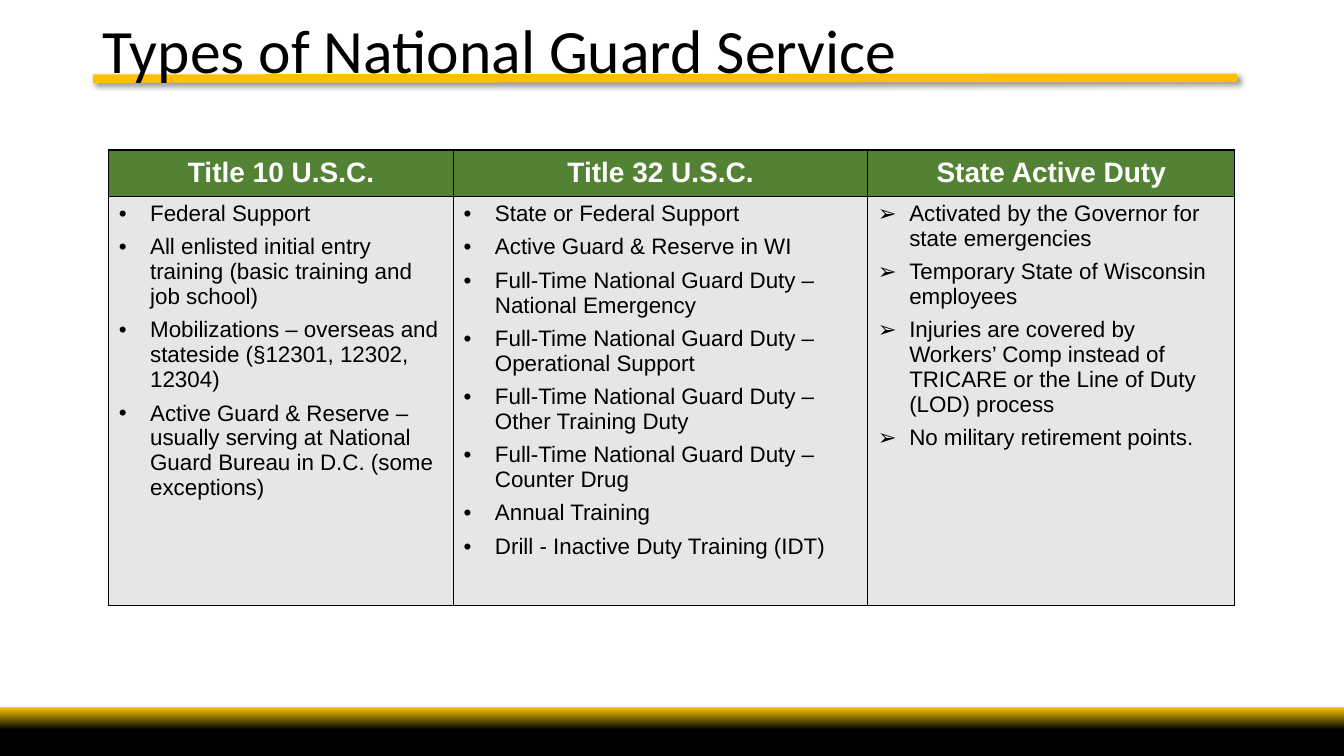
from lxml.etree import SubElement
from pptx import Presentation
from pptx.dml.color import RGBColor
from pptx.enum.shapes import MSO_CONNECTOR as Connector, MSO_SHAPE as Shape
from pptx.enum.text import MSO_ANCHOR as Anchor, PP_ALIGN as Align
from pptx.oxml.ns import qn
from pptx.util import Cm, Pt

HEADING = "Types of National Guard Service"
SERVICES = [
    ("Title 10 U.S.C.", 8.69, "•", [
        "Federal Support",
        "All enlisted initial entry training (basic training and job school)",
        "Mobilizations – overseas and stateside (§12301, 12302, 12304)",
        "Active Guard & Reserve – usually serving at National Guard Bureau in D.C. (some exceptions)",
    ]),
    ("Title 32 U.S.C.", 10.44, "•", [
        "State or Federal Support",
        "Active Guard & Reserve in WI",
        "Full-Time National Guard Duty – National Emergency",
        "Full-Time National Guard Duty – Operational Support",
        "Full-Time National Guard Duty – Other Training Duty",
        "Full-Time National Guard Duty – Counter Drug",
        "Annual Training",
        "Drill - Inactive Duty Training (IDT)",
    ]),
    ("State Active Duty", 9.25, "➢", [
        "Activated by the Governor for state emergencies",
        "Temporary State of Wisconsin employees",
        "Injuries are covered by Workers’ Comp instead of TRICARE or the Line of Duty (LOD) process",
        "No military retirement points.",
    ]),
]
COLORS = {
    "black": "000000", "white": "FFFFFF", "gold": "FFC000",
    "yellow": "FFCC00", "green": "548235", "gray": "E7E6E6",
}
SLIDE_WIDTH, SLIDE_HEIGHT = 33.87, 19.05
ROW_HEIGHTS = (1.17, 10.31)
INDENT = Cm(0.79)


def rgb(name):
    return RGBColor.from_string(COLORS[name])


def write(frame, lines, size, color="black", font="Arial", bold=False,
          align=Align.LEFT, bullet=None, after=0, spacing=None):
    frame.word_wrap = True
    for index, line in enumerate(lines):
        paragraph = frame.paragraphs[0] if index == 0 else frame.add_paragraph()
        if bullet:
            props = paragraph._p.get_or_add_pPr()
            props.set("marL", str(INDENT))
            props.set("indent", str(-INDENT))
            SubElement(props, qn("a:buFont"), typeface="Arial")
            SubElement(props, qn("a:buChar"), char=bullet)
        paragraph.alignment = align
        paragraph.space_after = Pt(after)
        if spacing:
            paragraph.line_spacing = spacing
        run = paragraph.add_run()
        run.text = line
        run.font.name, run.font.size, run.font.bold = font, Pt(size), bold
        run.font.color.rgb = rgb(color)


def style_cell(cell, color):
    props = cell._tc.get_or_add_tcPr()
    for side in ("lnL", "lnR", "lnT", "lnB"):
        border = SubElement(props, qn(f"a:{side}"), w=str(Pt(1)))
        paint = SubElement(border, qn("a:solidFill"))
        SubElement(paint, qn("a:srgbClr"), val=COLORS["black"])
    cell.fill.solid()
    cell.fill.fore_color.rgb = rgb(color)


def add_bar(slide, top, height):
    bar = slide.shapes.add_shape(Shape.RECTANGLE, 0, Cm(top), Cm(SLIDE_WIDTH), Cm(height))
    bar.shadow.inherit = False
    bar.line.fill.background()
    return bar


def add_rule(slide):
    rule = slide.shapes.add_connector(
        Connector.STRAIGHT, Cm(2.34), Cm(1.98), Cm(31.17), Cm(1.96))
    rule.line.color.rgb = rgb("gold")
    rule.line.width = Pt(6)
    effects = SubElement(rule._element.spPr, qn("a:effectLst"))
    shadow = SubElement(effects, qn("a:outerShdw"), blurRad=str(Pt(4)),
                        dist=str(Pt(3)), dir="2700000", algn="tl", rotWithShape="0")
    tint = SubElement(shadow, qn("a:srgbClr"), val=COLORS["black"])
    SubElement(tint, qn("a:alpha"), val="40000")


def add_services(slide):
    width = sum(service[1] for service in SERVICES)
    table = slide.shapes.add_table(
        len(ROW_HEIGHTS), len(SERVICES), Cm(2.74), Cm(3.78),
        Cm(width), Cm(sum(ROW_HEIGHTS))).table
    table.first_row = table.horz_banding = False
    for row, height in zip(table.rows, ROW_HEIGHTS):
        row.height = Cm(height)
    for column, (service, column_width, bullet, points) in enumerate(SERVICES):
        table.columns[column].width = Cm(column_width)
        header, body = table.cell(0, column), table.cell(1, column)
        style_cell(header, "green")
        style_cell(body, "gray")
        header.vertical_anchor = Anchor.MIDDLE
        write(header.text_frame, [service], 20, color="white", bold=True, align=Align.CENTER)
        write(body.text_frame, points, 16, bullet=bullet, after=6)


def main():
    deck = Presentation()
    deck.slide_width, deck.slide_height = Cm(SLIDE_WIDTH), Cm(SLIDE_HEIGHT)
    slide = deck.slides.add_slide(deck.slide_layouts[6])

    add_rule(slide)
    fade = add_bar(slide, 17.81, 0.58).fill
    fade.gradient()
    fade.gradient_angle = 90
    for stop, color in zip(fade.gradient_stops, ("black", "yellow")):
        stop.color.rgb = rgb(color)
    base = add_bar(slide, 18.39, 0.66).fill
    base.solid()
    base.fore_color.rgb = rgb("black")

    heading = slide.shapes.add_textbox(Cm(2.34), Cm(0.38), Cm(29.21), Cm(2.29))
    write(heading.text_frame, [HEADING], 44, font="Calibri", spacing=0.9)
    add_services(slide)
    deck.save("out.pptx")


if __name__ == "__main__":
    main()
